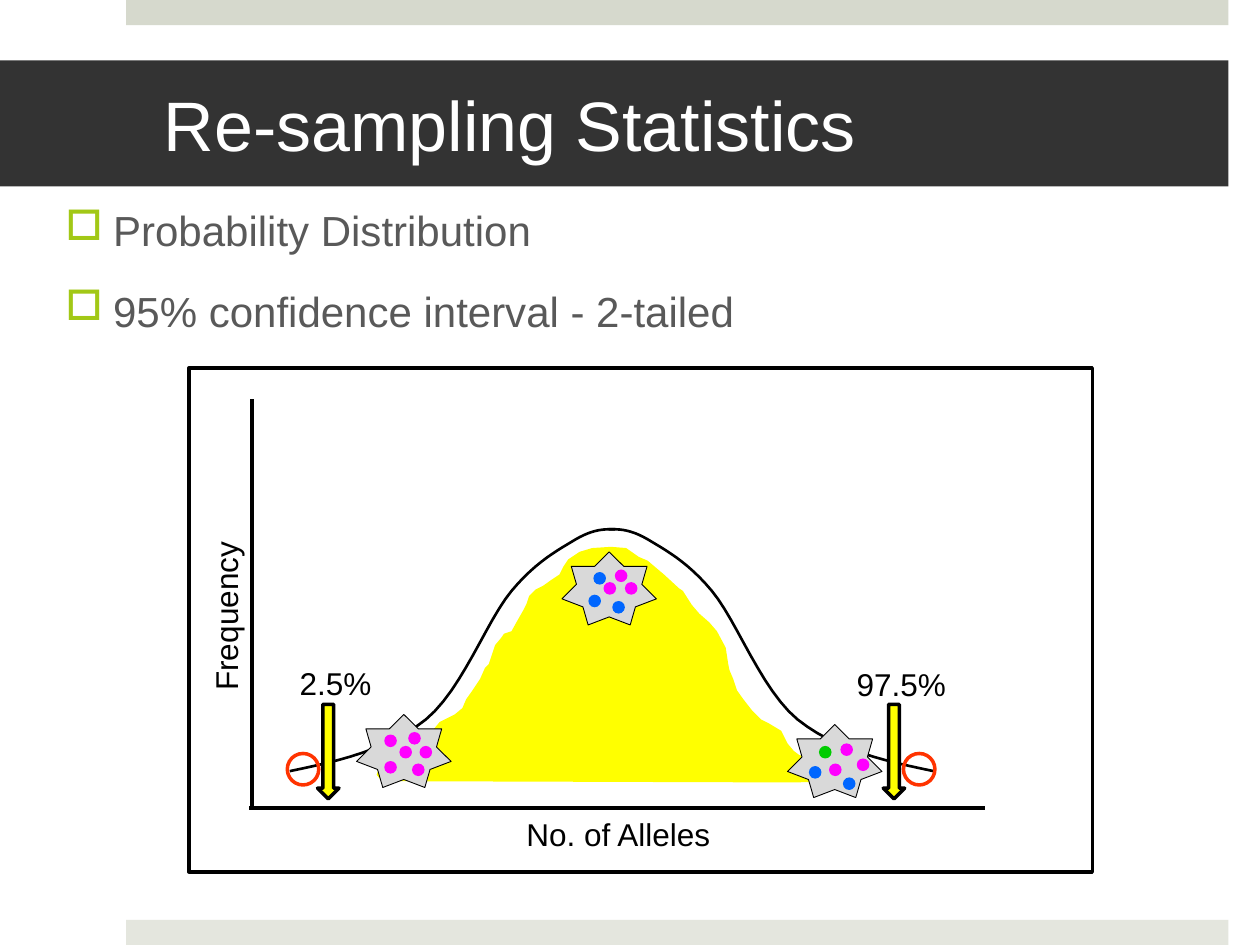
"""Build the re-sampling statistics slide."""
from lxml import etree
from pptx import Presentation
from pptx import util as u
from pptx.dml.color import RGBColor
from pptx.enum import shapes, text
from pptx.oxml.ns import qn

BLACK = RGBColor(0, 0, 0)
WHITE = RGBColor(255, 255, 255)
DARK = RGBColor(0x33, 0x33, 0x33)
BODY = RGBColor(0x59, 0x59, 0x59)
TOP_BAND = RGBColor(0xD6, 0xD9, 0xCD)
BOTTOM_BAND = RGBColor(0xE4, 0xE6, 0xDE)
YELLOW = RGBColor(0xFF, 0xFF, 0)
RED = RGBColor(0xFF, 0x33, 0)
GREY = RGBColor(0xD9, 0xD9, 0xD9)
BLUE = RGBColor(0, 0x66, 0xFF)
PINK = RGBColor(0xFF, 0, 0xFF)
GREEN = RGBColor(0, 0xCC, 0)
BULLET = "A2C816"
FONT = "Arial"
KIND = shapes.MSO_SHAPE

LEFT_TAIL = (2.3, 6.12)
LEFT_CURVE = [
    ((2.69, 6.04), (3.08, 5.95), (3.38, 5.71)),
    ((3.67, 5.47), (3.86, 4.93), (4.06, 4.69)),
    ((4.26, 4.45), (4.44, 4.36), (4.57, 4.28)),
    ((4.71, 4.2), (4.79, 4.2), (4.88, 4.2)),
]
MIRROR_SUM = 9.71
INTERVAL_AREA = [
    (4.85, 4.34), (4.7, 4.35), (4.6, 4.38), (4.51, 4.44), (4.47, 4.5), (4.44, 4.56),
    (4.38, 4.6), (4.31, 4.65), (4.25, 4.68), (4.2, 4.73), (4.18, 4.79), (4.15, 4.85),
    (4.11, 4.92), (4.06, 5.01), (4, 5.03), (3.98, 5.06), (3.93, 5.12), (3.91, 5.18),
    (3.88, 5.27), (3.85, 5.3), (3.81, 5.39), (3.75, 5.48), (3.7, 5.55), (3.67, 5.62),
    (3.61, 5.67), (3.55, 5.7), (3.49, 5.73), (3.44, 5.79), (3.42, 5.84), (3.35, 5.88),
    (3.25, 5.89), (3.18, 5.94), (3.16, 5.97), (3.09, 5.99), (3.03, 6.02), (2.99, 6.15),
    (3.03, 6.2), (6.3, 6.21), (6.68, 6.2), (6.69, 6.14), (6.64, 6.12), (6.54, 6.08),
    (6.48, 6.05), (6.41, 6.02), (6.34, 5.99), (6.3, 5.96), (6.25, 5.9), (6.2, 5.8),
    (6.1, 5.74), (6.04, 5.71), (5.97, 5.64), (5.9, 5.55), (5.85, 5.48), (5.82, 5.39),
    (5.79, 5.32), (5.78, 5.27), (5.76, 5.14), (5.69, 5.01), (5.63, 4.94), (5.55, 4.87),
    (5.49, 4.8), (5.42, 4.69), (5.39, 4.67), (5.27, 4.56), (5.14, 4.45), (5.07, 4.42),
    (4.97, 4.35),
]
POPULATIONS = [
    (4.46, 4.38, [(4.71, 4.54, BLUE), (4.79, 4.62, PINK), (4.88, 4.52, PINK),
                  (4.86, 4.77, BLUE), (4.67, 4.72, BLUE), (4.96, 4.62, PINK)]),
    (2.83, 5.67, [(3.05, 5.83, PINK), (3.27, 6.06, PINK), (3.24, 5.81, PINK),
                  (3.17, 5.92, PINK), (3.05, 6.04, PINK), (3.33, 5.92, PINK)]),
    (6.25, 5.75, [(6.5, 5.92, GREEN), (6.58, 6.06, PINK), (6.67, 5.9, PINK),
                  (6.69, 6.17, BLUE), (6.42, 6.08, BLUE), (6.8, 6.02, PINK)]),
]


def paint(shape, fill=None, line=None, width=1):
    """Set fill and outline, and drop the shadow."""
    shape.shadow.inherit = False
    if fill is None:
        shape.fill.background()
    else:
        shape.fill.solid()
        shape.fill.fore_color.rgb = fill
    if line is None:
        shape.line.fill.background()
    else:
        shape.line.color.rgb = line
        shape.line.width = u.Pt(width)


def add_preset(slide, kind, box, fill=None, line=None, width=1):
    """Add a preset shape in a box given in inches."""
    shape = slide.shapes.add_shape(kind, *map(u.Inches, box))
    paint(shape, fill, line, width)
    return shape


def add_outline(slide, points, closed, **style):
    """Add a freeform through points given in inches."""
    corners = [(u.Inches(x), u.Inches(y)) for x, y in points]
    builder = slide.shapes.build_freeform(*corners[0], scale=1.0)
    builder.add_line_segments(corners[1:], close=closed)
    paint(builder.convert_to_shape(), **style)


def add_axis(slide, start, end):
    """Add a straight axis line."""
    axis = slide.shapes.add_connector(
        shapes.MSO_CONNECTOR.STRAIGHT, *map(u.Inches, start + end))
    axis.line.color.rgb = BLACK
    axis.line.width = u.Pt(2.25)
    etree.SubElement(axis.element.spPr, qn("a:effectLst"))


def format_runs(paragraph, size, color):
    """Set the font of every run in a paragraph."""
    for run in paragraph.runs:
        run.font.name = FONT
        run.font.size = u.Pt(size)
        run.font.color.rgb = color


def add_label(slide, wording, box, rotation=0):
    """Add a chart label."""
    label = slide.shapes.add_textbox(*map(u.Inches, box))
    label.rotation = rotation
    label.text_frame.word_wrap = True
    label.text_frame.text = wording
    format_runs(label.text_frame.paragraphs[0], 18, BLACK)


def add_bullets(slide, lines, box):
    """Add a list with square bullets."""
    frame = slide.shapes.add_textbox(*map(u.Inches, box)).text_frame
    frame.word_wrap = True
    frame.text = "\n".join(lines)
    for paragraph in frame.paragraphs:
        paragraph.line_spacing = 0.9
        paragraph.space_before = u.Pt(20)
        format_runs(paragraph, 24, BODY)
        props = paragraph._p.get_or_add_pPr()
        props.set("marL", str(u.Inches(0.38)))
        props.set("indent", str(u.Inches(-0.38)))
        tint = etree.SubElement(props, qn("a:buClr"))
        etree.SubElement(tint, qn("a:srgbClr"), val=BULLET)
        etree.SubElement(props, qn("a:buChar"), char="□")


def format_title(slide, wording):
    """Fill the title placeholder and place it as a dark band."""
    title = slide.shapes.title
    title.left, title.top, title.width, title.height = map(u.Inches, (0, 0.48, 9.75, 1))
    title.fill.solid()
    title.fill.fore_color.rgb = DARK
    frame = title.text_frame
    frame.text = wording
    frame.auto_size = text.MSO_AUTO_SIZE.NONE
    frame.vertical_anchor = text.MSO_ANCHOR.MIDDLE
    frame.margin_left, frame.margin_right = u.Inches(1.3), u.Inches(0.3)
    frame.paragraphs[0].alignment = text.PP_ALIGN.LEFT
    format_runs(frame.paragraphs[0], 40, WHITE)


def trace_curve(start, segments, steps=12):
    """Return points along a chain of cubic curves."""
    points = [start]
    for first, second, end in segments:
        begin = points[-1]
        for step in range(1, steps + 1):
            t = step / steps
            weights = ((1 - t) ** 3, 3 * t * (1 - t) ** 2, 3 * t * t * (1 - t), t ** 3)
            controls = (begin, first, second, end)
            points.append(tuple(sum(w * c[i] for w, c in zip(weights, controls))
                                for i in (0, 1)))
    return points


def add_distribution(slide):
    """Draw the frame, axes and bell curve."""
    add_preset(slide, KIND.RECTANGLE, (1.5, 2.92, 7.17, 4), WHITE, BLACK, 2)
    add_axis(slide, (1.98, 6.41), (7.82, 6.41))
    add_axis(slide, (2, 3.17), (2, 6.42))
    left_half = trace_curve(LEFT_TAIL, LEFT_CURVE)
    right_half = [(MIRROR_SUM - x, y) for x, y in left_half]
    for half in (left_half, right_half):
        add_outline(slide, half, False, line=BLACK, width=1.5)
    add_label(slide, "Frequency", (1.08, 4.67, 1.42, 0.4), 270)
    add_label(slide, "No. of Alleles", (4.08, 6.42, 1.67, 0.4))


def add_limit(slide, wording, label_at, arrow_left, ring_left):
    """Mark one end of the confidence interval."""
    add_preset(slide, KIND.OVAL, (ring_left, 5.98, 0.25, 0.25), line=RED, width=2)
    arrow = add_preset(slide, KIND.RIGHT_ARROW, (arrow_left, 5.88, 0.75, 0.17),
                       YELLOW, BLACK, 2)
    arrow.rotation = 90
    add_label(slide, wording, label_at + (0.92, 0.4))


def add_population(slide, left, top, alleles):
    """Draw a star holding coloured alleles."""
    add_preset(slide, KIND.STAR_7_POINT, (left, top, 0.75, 0.58), GREY, BLACK, 0.5)
    for x, y, color in alleles:
        add_preset(slide, KIND.OVAL, (x, y, 0.1, 0.1), color)


def main():
    """Build and save the slide."""
    deck = Presentation()
    deck.slide_width, deck.slide_height = u.Inches(10), u.Inches(7.5)
    slide = deck.slides.add_slide(deck.slide_layouts[5])
    for top, color in ((0, TOP_BAND), (7.3, BOTTOM_BAND)):
        add_preset(slide, KIND.RECTANGLE, (1, top, 8.75, 0.2), color)
    format_title(slide, "Re-sampling Statistics")
    add_bullets(slide, ["Probability Distribution", "95% confidence interval - 2-tailed"],
                (0.42, 1.62, 5.67, 1.21))
    add_distribution(slide)
    add_limit(slide, "2.5%", (2.28, 5.22), 2.23, 2.28)
    add_limit(slide, "97.5%", (6.7, 5.23), 6.72, 7.17)
    add_outline(slide, INTERVAL_AREA, True, fill=YELLOW)
    for population in POPULATIONS:
        add_population(slide, *population)
    deck.save("out.pptx")


main()
